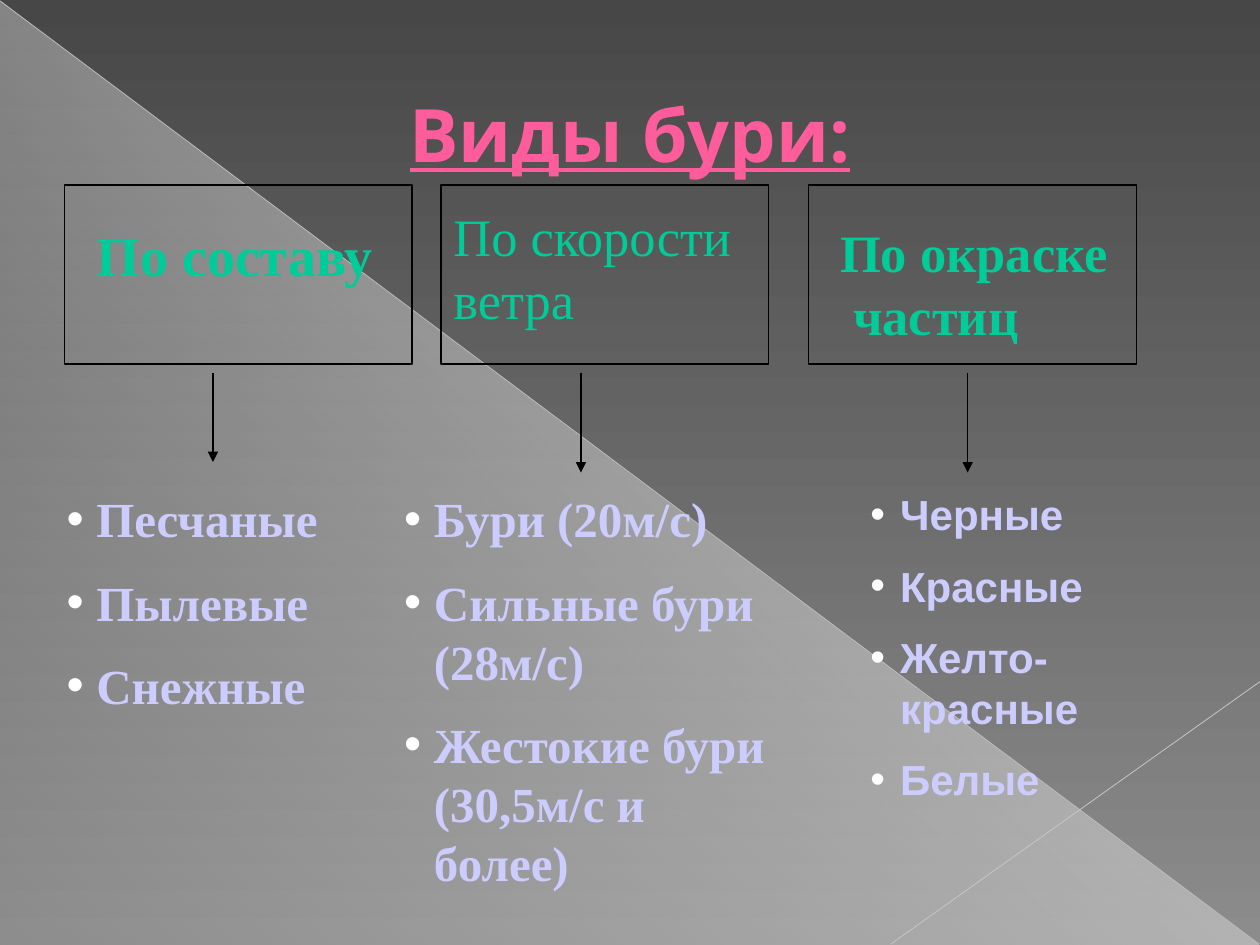
"""Build a slide that sorts storms by composition, wind speed and particle colour."""
from dataclasses import dataclass

from lxml import etree
from pptx import Presentation
from pptx.dml.color import RGBColor
from pptx.enum.shapes import MSO_CONNECTOR, MSO_SHAPE
from pptx.enum.text import MSO_ANCHOR, PP_ALIGN
from pptx.oxml.ns import qn
from pptx.util import Pt

STRAIGHT = MSO_CONNECTOR.STRAIGHT
RECTANGLE, RIGHT_TRIANGLE = MSO_SHAPE.RECTANGLE, MSO_SHAPE.RIGHT_TRIANGLE
TOP, MIDDLE = MSO_ANCHOR.TOP, MSO_ANCHOR.MIDDLE
LEFT, CENTER = PP_ALIGN.LEFT, PP_ALIGN.CENTER


@dataclass(frozen=True)
class Theme:
    """Colours, fonts and sizes of the slide."""
    back_top: str = "474747"
    back_bottom: str = "8C8C8C"
    sheen: str = "D2D2D2"
    rule: str = "BFBFBF"
    rule_light: str = "C6C6C6"
    ink: str = "000000"
    title: str = "FF5C9C"
    heading: str = "00CC99"
    item: str = "CCCCFF"
    bullet: str = "FFFFFF"
    sans: str = "Open Sans"
    serif: str = "Times New Roman"
    plain: str = "Arial"
    title_size: int = 42
    heading_size: int = 30
    heading_large: int = 32
    item_size: int = 28
    item_small: int = 24
    outline: float = 0.75
    hairline: float = 0.45
    indent: int = 17


class Deck:
    """Holds the theme and the current slide, and draws elements on it."""

    def __init__(self, prs, theme):
        self.theme = theme
        self.s = prs.slides.add_slide(prs.slide_layouts[6])

    def gradient(self, fill, colors, angle):
        """Fill with two colours along a counter-clockwise angle."""
        fill.gradient()
        fill.gradient_angle = angle
        for stop, position, color in zip(fill.gradient_stops, (0, 1), colors):
            stop.position = position
            stop.color.rgb = RGBColor.from_string(color)

    def background(self):
        """Paint the vertical background gradient."""
        t = self.theme
        self.gradient(self.s.background.fill, (t.back_top, t.back_bottom), 270)

    def sheen(self, x, y, w, h):
        """Add the triangle that fades out towards its corner."""
        sp = self.s.shapes.add_shape(RIGHT_TRIANGLE, Pt(x), Pt(y), Pt(w), Pt(h))
        sp.shadow.inherit = False
        sp.line.fill.background()
        self.gradient(sp.fill, (self.theme.sheen, self.theme.sheen), 227)
        last = list(sp._element.spPr.iter(qn("a:srgbClr")))[-1]
        etree.SubElement(last, qn("a:alpha")).set("val", "1000")

    def line(self, x1, y1, x2, y2, color, width, arrow=False):
        """Add a straight line, with an arrowhead at its end if wanted."""
        c = self.s.shapes.add_connector(STRAIGHT, Pt(x1), Pt(y1), Pt(x2), Pt(y2))
        c.line.color.rgb = RGBColor.from_string(color)
        c.line.width = Pt(width)
        if arrow:
            ln = c.line._get_or_add_ln()
            etree.SubElement(ln, qn("a:tailEnd")).set("type", "triangle")
        etree.SubElement(c._element.spPr, qn("a:effectLst"))

    def frame(self, x, y, w, h):
        """Add an unfilled outlined rectangle."""
        sp = self.s.shapes.add_shape(RECTANGLE, Pt(x), Pt(y), Pt(w), Pt(h))
        sp.shadow.inherit = False
        sp.fill.background()
        sp.line.color.rgb = RGBColor.from_string(self.theme.ink)
        sp.line.width = Pt(self.theme.outline)

    def text(self, box, lines, font, size, color, bold=True, underline=False,
             align=LEFT, anchor=TOP):
        """Add a text box and return its paragraphs."""
        tf = self.s.shapes.add_textbox(*map(Pt, box)).text_frame
        tf.word_wrap = True
        tf.vertical_anchor = anchor
        tf.text = "\n".join(lines)
        for p in tf.paragraphs:
            p.alignment = align
            p.font.name, p.font.size = font, Pt(size)
            p.font.bold, p.font.underline = bold, underline
            p.font.color.rgb = RGBColor.from_string(color)
        return tf.paragraphs

    def bullets(self, box, items, font, size):
        """Add a bulleted list with half a line between items."""
        t = self.theme
        for i, p in enumerate(self.text(box, items, font, size, t.item)):
            if i:
                p.space_before = Pt(size / 2)
            pPr = p._p.get_or_add_pPr()
            pPr.set("marL", str(Pt(t.indent)))
            pPr.set("indent", str(-Pt(t.indent)))
            bu_color = etree.Element(qn("a:buClr"))
            etree.SubElement(bu_color, qn("a:srgbClr")).set("val", t.bullet)
            bu_font = etree.Element(qn("a:buFont"))
            bu_font.set("typeface", t.plain)
            bu_char = etree.Element(qn("a:buChar"))
            bu_char.set("char", "•")
            at = pPr.index(pPr.find(qn("a:defRPr")))
            pPr[at:at] = [bu_color, bu_font, bu_char]


def main():
    """Draw the slide and save it."""
    prs = Presentation()
    prs.slide_width, prs.slide_height = Pt(720), Pt(540)
    t = Theme()
    deck = Deck(prs, t)

    deck.background()
    deck.sheen(0.5, 1, 719.5, 539)
    deck.line(0, 0.5, 719.5, 539.5, t.rule, t.hairline)
    deck.line(720, 389.5, 509, 539.5, t.rule_light, t.hairline)
    deck.text((36, 21, 648, 110), ["Виды бури:"], t.sans, t.title_size, t.title,
              underline=True, align=CENTER, anchor=MIDDLE)

    frames = [(36.7, 198.7), (252, 187.2), (462.2, 187.2)]
    arrows = [(121.7, 264), (332, 270), (553, 270)]
    headings = [
        ((48.2, 122.4, 175.7, 45.4), ["По составу"], t.heading_large, True),
        ((252, 113, 181.4, 79.2), ["По скорости", "ветра"], t.heading_size, False),
        ((473, 122.4, 168.5, 79.2), ["По окраске", " частиц"], t.heading_size, True),
    ]
    lists = [
        ((31, 158.4, 141.8), ["Песчаные", "Пылевые", "Снежные"],
         t.serif, t.item_size),
        ((223.9, 232.6, 208.8),
         ["Бури (20м/с)", "Сильные бури (28м/с)", "Жестокие бури (30,5м/с и более)"],
         t.serif, t.item_size),
        ((490.3, 187.2, 194.4), ["Черные", "Красные", "Желто-красные", "Белые"],
         t.plain, t.item_small),
    ]
    for (x, w), (ax, ay), heading, column in zip(frames, arrows, headings, lists):
        deck.frame(x, 105.8, w, 102.2)
        box, lines, size, bold = heading
        deck.text(box, lines, t.serif, size, t.heading, bold)
        deck.line(ax, 213, ax, ay, t.ink, t.outline, arrow=True)
        (lx, lw, lh), items, font, size = column
        deck.bullets((lx, 275.8, lw, lh), items, font, size)

    prs.save("out.pptx")


if __name__ == "__main__":
    main()
